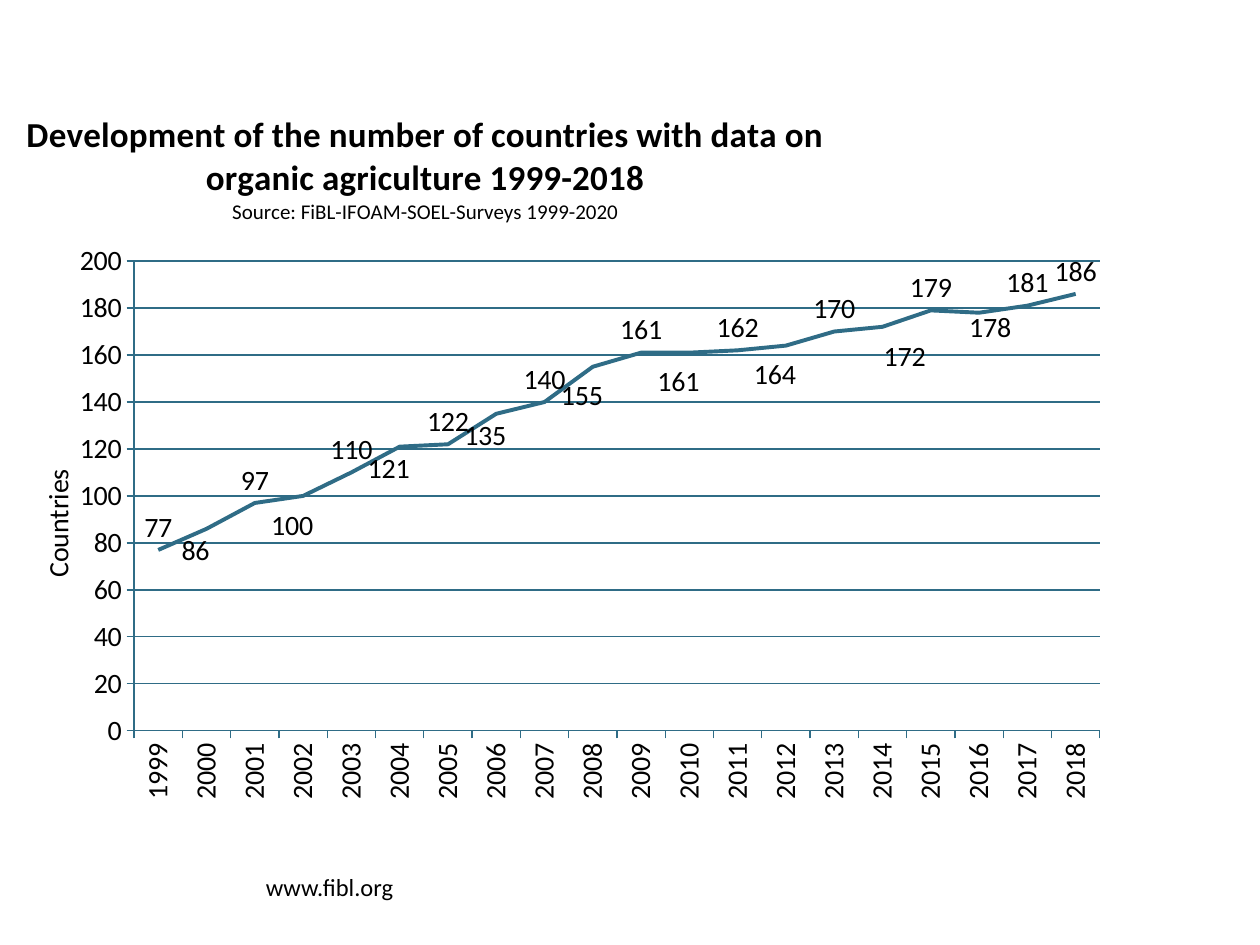
from lxml import etree
from pptx import Presentation
from pptx import util as u
from pptx.chart.data import CategoryChartData
from pptx.dml.color import RGBColor
from pptx.enum import chart as ch, text
from pptx.oxml.ns import qn

FONT, BLACK, TEAL = "Calibri", "000000", "2F6C86"
TITLE = [("Development of the number of countries with data on organic agriculture 1999-2018", 20, True),
         ("Source: FiBL-IFOAM-SOEL-Surveys 1999-2020", 12, False)]
AXIS_TITLE = "Countries"
SITE = "www.fibl.org"
FIRST_YEAR = 1999
COUNTRIES = [77, 86, 97, 100, 110, 121, 122, 135, 140, 155,
             161, 161, 162, 164, 170, 172, 179, 178, 181, 186]
LOWERED = {1: (-0.01, 0.06), 3: (-0.01, 0.07), 5: (-0.01, 0.06),
           7: (-0.01, 0.06), 9: (-0.01, 0.07), 11: (-0.01, 0.07),
           13: (-0.01, 0.07), 15: (0.02, 0.07), 17: (0.01, 0.05)}


def color(value):
    """Turn a hex string into a colour."""
    return RGBColor.from_string(value)


def style(font, size, bold=False):
    """Set the shared typeface and colour at the given size."""
    font.name, font.size, font.bold = FONT, u.Pt(size), bold
    font.color.rgb = color(BLACK)


def draw(line, width=0.75):
    """Give a line the theme colour."""
    line.color.rgb = color(TEAL)
    line.width = u.Pt(width)


def place(parent, index, **values):
    """Put a manual layout into a chart element."""
    for old in parent.findall(qn("c:layout")):
        parent.remove(old)
    layout = etree.Element(qn("c:layout"))
    manual = etree.SubElement(layout, qn("c:manualLayout"))
    for name, value in values.items():
        etree.SubElement(manual, qn("c:" + name)).set("val", str(value))
    parent.insert(index, layout)


def add_chart(s):
    """Add the line chart of countries per year."""
    data = CategoryChartData()
    data.categories = [str(FIRST_YEAR + i) for i in range(len(COUNTRIES))]
    data.add_series("Series 1", COUNTRIES)
    chart = s.shapes.add_chart(ch.XL_CHART_TYPE.LINE, u.Inches(0.18), u.Inches(0.79),
                               u.Inches(8.76), u.Inches(5.91), data).chart
    style(chart.font, 18)
    chart.has_legend = False
    chart.has_title = True
    tf = chart.chart_title.text_frame
    for i, (line, size, bold) in enumerate(TITLE):
        p = tf.add_paragraph() if i else tf.paragraphs[0]
        p.text = line
        style(p.runs[0].font, size, bold)
    place(chart.chart_title._element, 1, xMode="edge", yMode="edge", x=0, y=0.01)
    plot_area = chart._chartSpace.chart.plotArea
    place(plot_area, 0, layoutTarget="inner", xMode="edge", yMode="edge",
          x=0.101, y=0.217, w=0.875, h=0.631)

    years, values = chart.category_axis, chart.value_axis
    for axis in (years, values):
        axis.major_tick_mark = ch.XL_TICK_MARK.OUTSIDE
        style(axis.tick_labels.font, 16)
        draw(axis.format.line)
    years._element.find(qn("c:txPr")).find(qn("a:bodyPr")).set("rot", "-5400000")
    values.minimum_scale, values.maximum_scale, values.major_unit = 0, 200, 20
    draw(values.major_gridlines.format.line)
    values.has_title = True
    tf = values.axis_title.text_frame
    tf.text = AXIS_TITLE
    tf._txBody.bodyPr.set("rot", "-5400000")
    style(tf.paragraphs[0].runs[0].font, 16)
    place(values.axis_title._element, 1, xMode="edge", yMode="edge", x=0.01, y=0.49)

    plot = chart.plots[0]
    plot.vary_by_categories = False
    series = plot.series[0]
    series.smooth = False
    series.marker.style = ch.XL_MARKER_STYLE.NONE
    draw(series.format.line, 2.25)
    labels = series.data_labels
    labels.show_value = True
    labels.position = ch.XL_LABEL_POSITION.ABOVE
    style(labels.font, 16)
    for i, (dx, dy) in LOWERED.items():
        label = series.points[i].data_label
        label.position = ch.XL_LABEL_POSITION.ABOVE
        style(label.font, 16)
        place(labels._element.findall(qn("c:dLbl"))[-1], 1, x=dx, y=dy)


def add_site(s):
    """Add the web address at the foot of the slide."""
    tf = s.shapes.add_textbox(u.Inches(2.11), u.Inches(6.86),
                              u.Inches(2.99), u.Inches(0.34)).text_frame
    tf.word_wrap = True
    tf.margin_left = tf.margin_right = 0
    tf.vertical_anchor = text.MSO_ANCHOR.BOTTOM
    tf.text = SITE
    style(tf.paragraphs[0].runs[0].font, 14)


def main():
    """Build the slide and save it."""
    prs = Presentation()
    prs.slide_width, prs.slide_height = u.Inches(10), u.Inches(7.5)
    s = prs.slides.add_slide(prs.slide_layouts[6])
    add_site(s)
    add_chart(s)
    prs.save("out.pptx")


if __name__ == "__main__":
    main()
